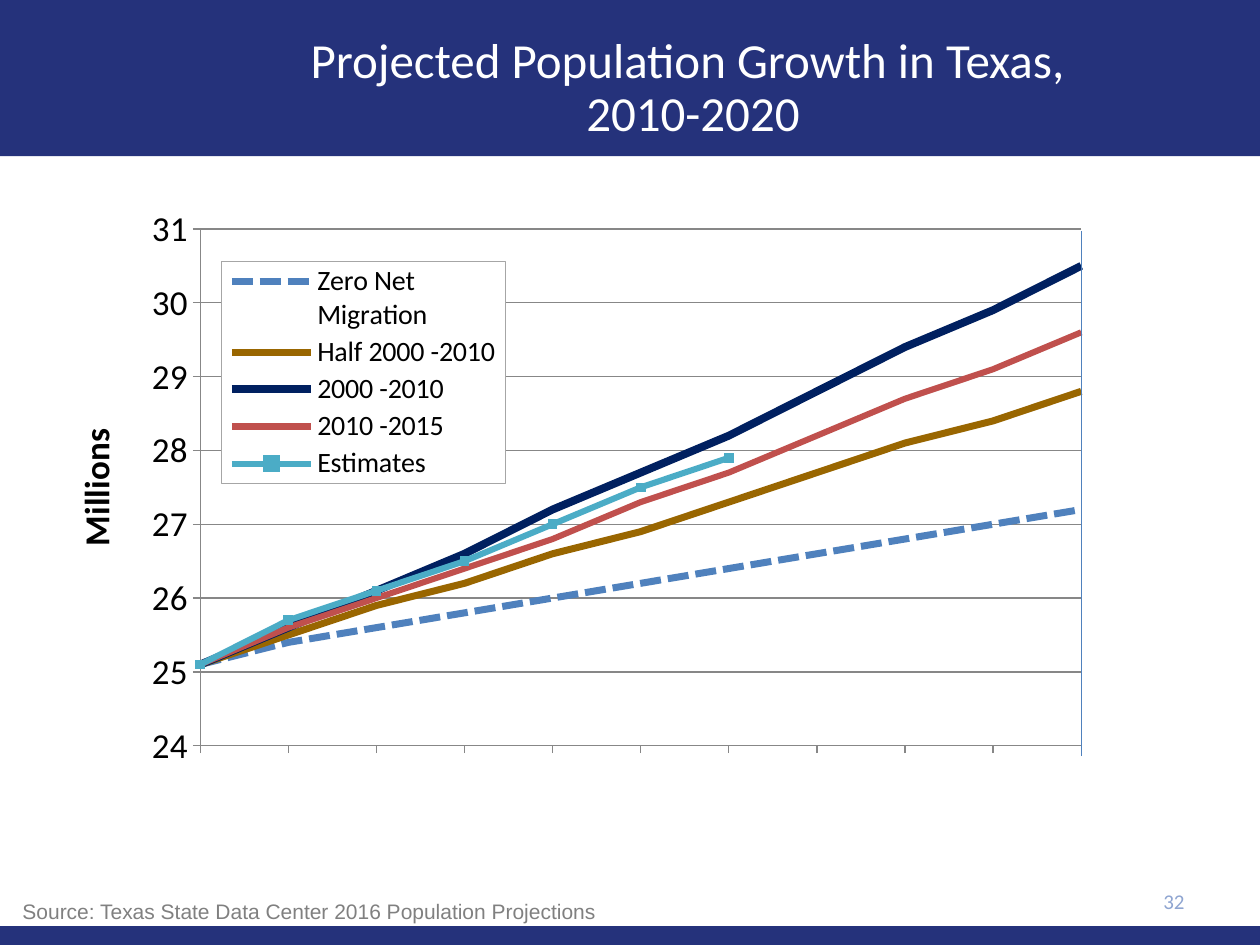
from pptx import Presentation
from pptx.chart.data import CategoryChartData
from pptx.dml.color import RGBColor
from pptx.enum import chart as ch, dml, shapes, text
from pptx.oxml import parse_xml
from pptx.oxml.ns import nsdecls, qn
from pptx.util import Inches, Pt

NAVY = "25327B"
GREY = "878787"
YEARS = [str(year) for year in range(2010, 2021)]
# name, colour, line width, values in millions
SERIES = [
    ("Zero Net Migration", "4F81BD", 4,
     [25.1, 25.4, 25.6, 25.8, 26, 26.2, 26.4, 26.6, 26.8, 27, 27.2]),
    ("Half 2000 -2010", "996600", 4,
     [25.1, 25.5, 25.9, 26.2, 26.6, 26.9, 27.3, 27.7, 28.1, 28.4, 28.8]),
    ("2000 -2010", "002060", 4.5,
     [25.1, 25.6, 26.1, 26.6, 27.2, 27.7, 28.2, 28.8, 29.4, 29.9, 30.5]),
    ("2010 -2015", "C0504D", 3.5,
     [25.1, 25.6, 26, 26.4, 26.8, 27.3, 27.7, 28.2, 28.7, 29.1, 29.6]),
    ("Estimates", "4BACC6", 3.5,
     [25.1, 25.7, 26.1, 26.5, 27, 27.5, 27.9] + [None] * 4),
]


def rgb(color):
    return RGBColor.from_string(color)


def style(font, size, color, name="Calibri"):
    font.size, font.name = Pt(size), name
    font.color.rgb = rgb(color)


def paint(fmt, fill, line):
    fmt.fill.solid()
    fmt.fill.fore_color.rgb = rgb(fill)
    fmt.line.color.rgb = rgb(line)


def add_bar(s, x, y, w, h):
    bar = s.shapes.add_shape(shapes.MSO_SHAPE.RECTANGLE, *map(Inches, (x, y, w, h)))
    bar.shadow.inherit = False
    bar.fill.solid()
    bar.fill.fore_color.rgb = rgb(NAVY)
    bar.line.fill.background()


def set_title(s, x, y, w, h):
    title = s.shapes.title
    s.shapes._spTree.append(title._element)  # in front of the header bar
    title.left, title.top, title.width, title.height = map(Inches, (x, y, w, h))
    tf = title.text_frame
    tf.text = "Projected Population Growth in Texas, \v2010-2020"
    tf.vertical_anchor = text.MSO_ANCHOR.MIDDLE
    p = tf.paragraphs[0]
    p.alignment = text.PP_ALIGN.CENTER
    p.line_spacing = 0.9
    style(p.font, 28, "FFFFFF")


def add_label(s, box, words, color, font, align, anchor):
    tf = s.shapes.add_textbox(*map(Inches, box)).text_frame
    tf.word_wrap = True
    tf.vertical_anchor = anchor
    p = tf.paragraphs[0]
    p.text, p.alignment = words, align
    style(p.font, 12, color, font)


def manual_layout(x, y, w, h, inner=False):
    target = '<c:layoutTarget val="inner"/>' if inner else ""
    sizes = "".join(f'<c:{k} val="{v}"/>' for k, v in zip("xywh", (x, y, w, h)))
    return parse_xml(
        f'<c:layout {nsdecls("c")}><c:manualLayout>{target}<c:xMode val="edge"/>'
        f'<c:yMode val="edge"/>{sizes}</c:manualLayout></c:layout>')


def replace_layout(parent, layout, index):
    for old in parent.findall(qn("c:layout")):
        parent.remove(old)
    parent.insert(index, layout)


def format_axes(chart):
    cat, val = chart.category_axis, chart.value_axis
    for axis in (cat, val):
        axis.major_tick_mark = ch.XL_TICK_MARK.OUTSIDE
        axis.format.line.color.rgb = rgb(GREY)
    cat.tick_label_position = ch.XL_TICK_LABEL_POSITION.NONE
    val.minimum_scale, val.maximum_scale = 24, 31
    val.tick_labels.number_format = "0"
    val.tick_labels.number_format_is_linked = False
    val.major_gridlines.format.line.color.rgb = rgb(GREY)
    p = val.axis_title.text_frame.paragraphs[0]
    p.text = "Millions"
    style(p.font, 20, "000000")
    p.font.bold = True
    # Lines start on the value axis instead of half a category away
    ax = val._element
    for old in ax.findall(qn("c:crossBetween")):
        ax.remove(old)
    ax.find(qn("c:crosses")).addnext(
        parse_xml(f'<c:crossBetween {nsdecls("c")} val="midCat"/>'))
    val.major_unit = 1


def format_legend(chart):
    chart.has_legend = True
    legend = chart.legend
    legend.position = ch.XL_LEGEND_POSITION.LEFT
    legend.include_in_layout = False
    style(legend.font, 16, "000000")
    el = legend._element
    replace_layout(el, manual_layout(0.14, 0.11, 0.25, 0.34), 1)
    el.find(qn("c:overlay")).set("val", "1")
    el.find(qn("c:overlay")).addnext(parse_xml(
        f'<c:spPr {nsdecls("c", "a")}><a:solidFill><a:srgbClr val="FFFFFF"/></a:solidFill>'
        '<a:ln w="6350"><a:solidFill><a:srgbClr val="A6A6A6"/></a:solidFill></a:ln></c:spPr>'))


def add_growth_chart(s, x, y, w, h):
    data = CategoryChartData()
    data.categories = YEARS
    for name, _, _, values in SERIES:
        data.add_series(name, values)
    chart = s.shapes.add_chart(ch.XL_CHART_TYPE.LINE_MARKERS,
                               *map(Inches, (x, y, w, h)), data).chart
    chart.has_title = False
    style(chart.font, 20, "000000")
    plot = chart.plots[0]
    plot.vary_by_categories = False
    for series, (name, color, width, _) in zip(plot.series, SERIES):
        series.smooth = False
        series.format.line.color.rgb = rgb(color)
        series.format.line.width = Pt(width)
        if name == "Estimates":
            series.marker.style, series.marker.size = ch.XL_MARKER_STYLE.SQUARE, 5
            paint(series.marker.format, color, color)
        else:
            series.marker.style = ch.XL_MARKER_STYLE.NONE
    plot.series[0].format.line.dash_style = dml.MSO_LINE.SQUARE_DOT
    format_axes(chart)
    format_legend(chart)
    area = chart._chartSpace.chart.plotArea
    replace_layout(area, manual_layout(0.121, 0.061, 0.777, 0.789, inner=True), 0)


def add_right_edge(s, x, top, bottom):
    edge = s.shapes.add_connector(shapes.MSO_CONNECTOR.STRAIGHT,
                                  *map(Inches, (x, bottom, x, top)))
    edge.line.color.rgb = rgb("4F81BD")
    edge.line.width = Pt(0.5)
    edge._element.spPr.append(parse_xml(f'<a:effectLst {nsdecls("a")}/>'))


def main():
    prs = Presentation()
    prs.slide_width, prs.slide_height = Inches(10), Inches(7.5)
    s = prs.slides.add_slide(prs.slide_layouts[5])
    add_bar(s, 0, 0, 10, 1.24)
    add_bar(s, 0, 7.35, 10, 0.15)
    add_growth_chart(s, 0.5, 1.5, 9, 5.2)
    set_title(s, 1.75, 0.17, 7.5, 1.08)
    add_label(s, (7.17, 6.95, 2.33, 0.4), "32", "8FA5D1", "Calibri",
              text.PP_ALIGN.RIGHT, text.MSO_ANCHOR.MIDDLE)
    add_label(s, (0.08, 7.08, 9.58, 0.3),
              "Source: Texas State Data Center 2016 Population Projections",
              "808080", "Arial", text.PP_ALIGN.LEFT, text.MSO_ANCHOR.TOP)
    add_right_edge(s, 8.58, 1.83, 6)
    prs.save("out.pptx")


if __name__ == "__main__":
    main()
